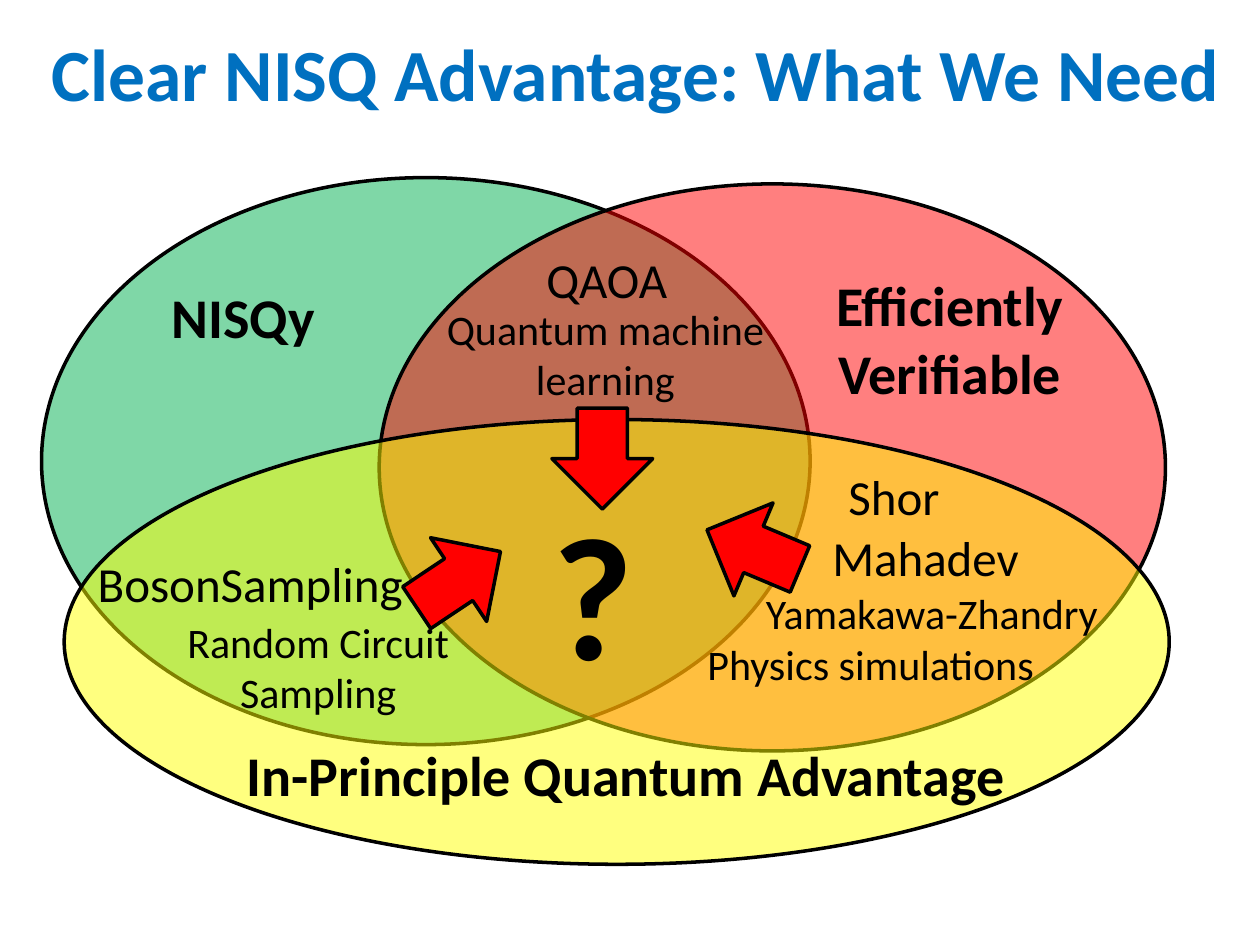
from dataclasses import dataclass
from lxml.etree import SubElement
from pptx import Presentation
from pptx.dml.color import RGBColor
from pptx.enum.shapes import MSO_SHAPE
from pptx.enum.text import MSO_ANCHOR, PP_ALIGN
from pptx.oxml.ns import qn
from pptx.util import Inches, Pt


@dataclass(frozen=True)
class Theme:
    font: str = "Calibri"
    ink: str = "000000"
    title: str = "0070C0"
    green: str = "00B050"
    red: str = "FF0000"
    yellow: str = "FFFF00"
    line: float = 2
    head: int = 42
    name: int = 32
    item: int = 28
    note: int = 24
    mark: int = 100


@dataclass(frozen=True)
class Box:
    col: float
    row: float
    cols: float
    rows: float

    def inner(self, col, row, cols, rows):
        return Box(self.col + col, self.row + row, cols, rows)

    def rect(self):
        return [Inches(n * CELL) for n in (self.col, self.row, self.cols, self.rows)]


THEME = Theme()
CELL = 0.1


def color(code):
    return RGBColor.from_string(code)


def write(slide, box, text, size=THEME.item, bold=False, ink=THEME.ink,
          anchor=MSO_ANCHOR.TOP):
    frame = slide.shapes.add_textbox(*box.rect()).text_frame
    frame.word_wrap = True
    frame.vertical_anchor = anchor
    frame.text = text
    for para in frame.paragraphs:
        para.alignment = PP_ALIGN.CENTER
        font = para.runs[0].font
        font.name, font.size, font.bold = THEME.font, Pt(size), bold
        font.color.rgb = color(ink)


def draw(slide, box, kind, fill, alpha=100, turn=0):
    shape = slide.shapes.add_shape(kind, *box.rect())
    shape.shadow.inherit = False
    shape.rotation = turn
    shape.fill.solid()
    shape.fill.fore_color.rgb = color(fill)
    shape.line.color.rgb = color(THEME.ink)
    shape.line.width = Pt(THEME.line)
    if alpha < 100:
        tint = shape.element.spPr.find(qn("a:solidFill"))[0]
        SubElement(tint, qn("a:alpha"), val=str(alpha * 1000))


def title(slide, box):
    write(slide, box, "Clear NISQ Advantage: What We Need", size=THEME.head,
          bold=True, ink=THEME.title, anchor=MSO_ANCHOR.MIDDLE)


def rings(slide, box):
    for spot, fill in (
        ((0, 0, 61, 45), THEME.green),
        ((26.8, 0.5, 62.4, 45), THEME.red),
        ((1.8, 19.2, 87.7, 35.3), THEME.yellow),
    ):
        draw(slide, box.inner(*spot), MSO_SHAPE.OVAL, fill, alpha=50)


def names(slide, box):
    for text, spot in (
        ("NISQy", (0.7, 7.8, 30.6, 6.4)),
        ("Efficiently\nVerifiable", (61.1, 6.9, 22, 11.8)),
        ("In-Principle Quantum Advantage", (15.2, 44.2, 62.4, 6.4)),
    ):
        write(slide, box.inner(*spot), text, size=THEME.name, bold=True)


def items(slide, box):
    for text, size, spot in (
        ("Mahadev", THEME.item, (60.1, 27.3, 20.1, 5.7)),
        ("Shor", THEME.item, (57.6, 22.4, 20.1, 5.7)),
        ("Physics simulations", THEME.note, (50.5, 36.1, 30.6, 5.1)),
        ("QAOA", THEME.item, (34.8, 5.2, 20.1, 5.7)),
        ("Quantum machine learning", THEME.note, (27.8, 9.5, 33.9, 9.1)),
        ("BosonSampling", THEME.item, (2.6, 29.3, 27.9, 5.7)),
        ("Yamakawa-Zhandry", THEME.note, (53.7, 32, 33.9, 5.1)),
        ("Random Circuit Sampling", THEME.note, (8, 34.3, 27.9, 9.1)),
    ):
        write(slide, box.inner(*spot), text, size=size)


def goal(slide, box):
    write(slide, box.inner(25.9, 23.9, 35.8, 17.8), "?", size=THEME.mark, bold=True)
    for col, row, turn in ((29.1, 27.9, 326.2), (52.5, 25.5, 202.8), (40.5, 18.3, 90)):
        draw(slide, box.inner(col, row, 8, 8), MSO_SHAPE.RIGHT_ARROW, THEME.red, turn=turn)


def main():
    deck = Presentation()
    deck.slide_width, deck.slide_height = Inches(100 * CELL), Inches(75 * CELL)
    slide = deck.slides.add_slide(deck.slide_layouts[6])
    title(slide, Box(1.7, 1.1, 97.5, 9.3))
    venn = Box(3.3, 14.1, 89.5, 54.5)
    for region in (rings, names, items, goal):
        region(slide, venn)
    deck.save("out.pptx")


if __name__ == "__main__":
    main()
